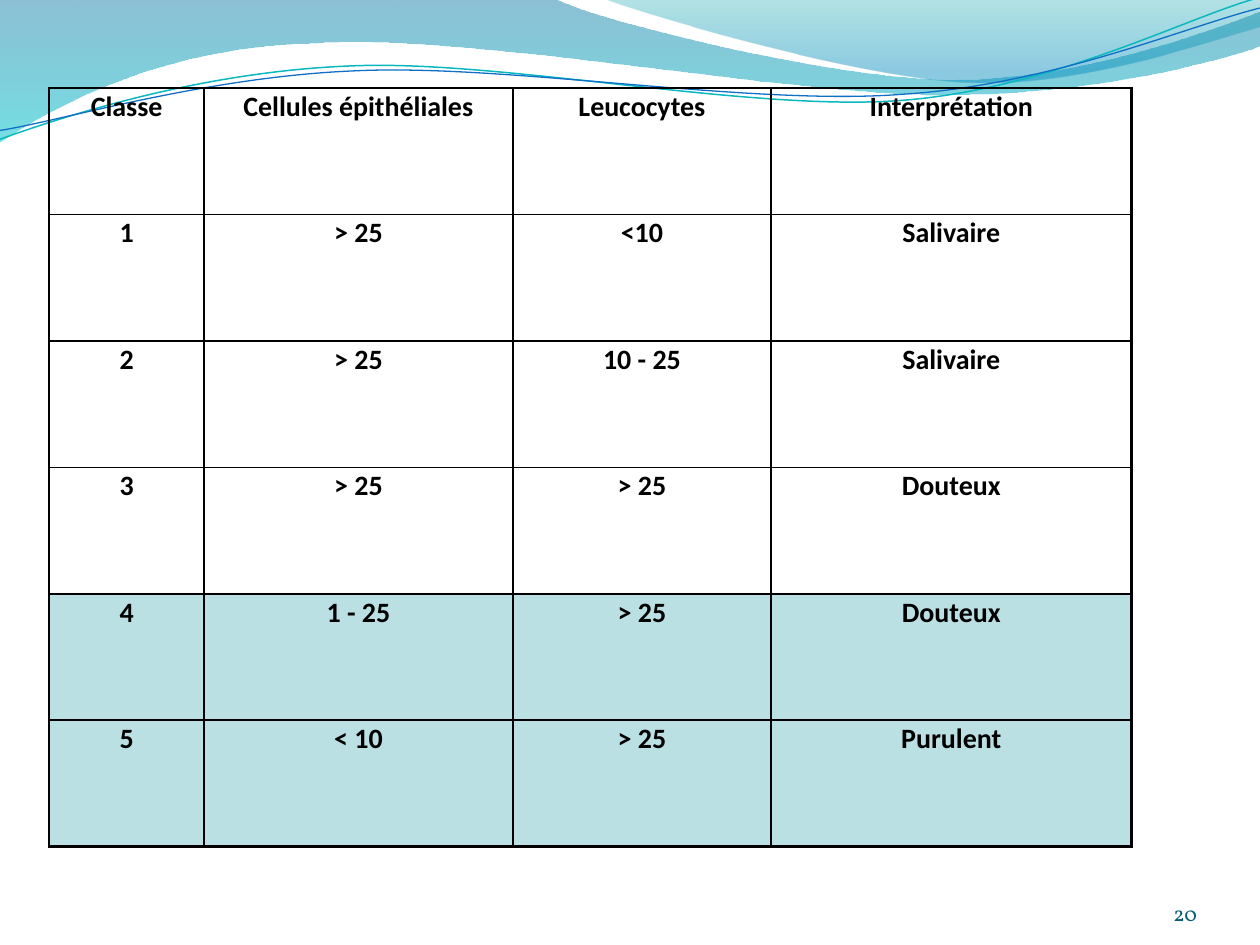
from lxml import etree
from pptx import Presentation
from pptx.dml.color import RGBColor
from pptx.enum.text import MSO_ANCHOR, PP_ALIGN
from pptx.oxml.ns import qn
from pptx.util import Pt

SCALE = 9144
BLANK_LAYOUT = 6
CENTER = PP_ALIGN.CENTER
RIGHT = PP_ALIGN.RIGHT
TOP = MSO_ANCHOR.TOP
BOTTOM = MSO_ANCHOR.BOTTOM

BLACK = RGBColor(0x00, 0x00, 0x00)
HIGHLIGHT = RGBColor(0xBB, 0xE0, 0xE3)
PAGE_NUMBER = RGBColor(0x04, 0x5D, 0x75)
WAVE_BLUE = RGBColor(0x00, 0x74, 0xA1)
WAVE_CYAN = RGBColor(0x00, 0xC6, 0xCF)
CREST_TEAL = RGBColor(0x00, 0xA1, 0xA9)
CREST_BLUE = RGBColor(0x00, 0x8B, 0xBF)
LINE_TEAL = RGBColor(0x0A, 0xB8, 0xBF)
LINE_BLUE = RGBColor(0x0F, 0x6F, 0xC6)

WAVE = [[(0, 0)], [(440, -1)],
        [(476, 17), (664, 63), (758, 63)], [(853, 63), (958, 26), (1000, 9)],
        [(1001, 36)],
        [(983, 44), (870, 76), (746, 75)], [(622, 75), (382, 28), (257, 34)],
        [(129, 36), (46, 83), (-1, 113)]]
CREST = [[(479, -1)],
         [(509, 11), (682, 62), (769, 65)], [(856, 69), (961, 32), (1000, 21)],
         [(1000, 0)]]
TEAL_LINE = [[(-2, 87)],
             [(47, 72), (158, 41), (278, 42)], [(396, 42), (591, 93), (712, 90)],
             [(832, 87), (940, 36), (1000, 22)]]
BLUE_LINE = [[(-2, 80)],
             [(46, 75), (164, 45), (283, 46)], [(403, 46), (596, 89), (716, 85)],
             [(835, 83), (942, 42), (1002, 30)]]
LINE_ROTATION = 357.3

COLUMN_WIDTHS = [123, 245, 205, 286]
ROWS = [
    ("Classe", "Cellules épithéliales", "Leucocytes", "Interprétation"),
    ("1", "> 25", "<10", "Salivaire"),
    ("2", "> 25", "10 - 25", "Salivaire"),
    ("3", "> 25", "> 25", "Douteux"),
    ("4", "1 - 25", "> 25", "Douteux"),
    ("5", "< 10", "> 25", "Purulent"),
]
FIRST_HIGHLIGHTED_ROW = 4


def px(value):
    return round(value * SCALE)


def bend_segments(shape, segments):
    lines = iter(list(shape._element.spPr.iter(qn("a:lnTo"))))
    for segment in segments:
        parts = [next(lines) for _ in segment]
        if len(parts) == 3:
            curve = etree.Element(qn("a:cubicBezTo"))
            parts[0].addprevious(curve)
            for part in parts:
                curve.append(part[0])
                part.getparent().remove(part)


def add_outline(slide, left, top, outline, close):
    vertices = [(px(left + x), px(top + y)) for segment in outline for x, y in segment]
    builder = slide.shapes.build_freeform(*vertices[0], scale=1.0)
    builder.add_line_segments(vertices[1:], close=close)
    shape = builder.convert_to_shape()
    shape.shadow.inherit = False
    bend_segments(shape, outline[1:])
    return shape


def add_gradient_area(slide, left, top, outline, stops):
    shape = add_outline(slide, left, top, outline, True)
    shape.line.fill.background()
    shape.fill.gradient()
    shape.fill.gradient_angle = 270
    for stop, (position, color, _) in zip(shape.fill.gradient_stops, stops):
        stop.position = position
        stop.color.rgb = color
    colors = shape._element.spPr.iter(qn("a:srgbClr"))
    for color, (_, _, opacity) in zip(colors, stops):
        etree.SubElement(color, qn("a:alpha"), val=str(opacity * 1000))


def add_wave_line(slide, left, top, outline, color, width):
    shape = add_outline(slide, left, top, outline, False)
    shape.rotation = LINE_ROTATION
    shape.fill.background()
    shape.line.color.rgb = color
    shape.line.width = Pt(width)


def add_wave_banner(slide, left, top):
    add_gradient_area(slide, left, top, WAVE, [(0, WAVE_BLUE, 45), (1, WAVE_CYAN, 55)])
    add_gradient_area(slide, left, top, CREST, [(0, CREST_TEAL, 30), (0.8, CREST_BLUE, 45)])
    add_wave_line(slide, left, top, TEAL_LINE, LINE_TEAL, 0.85)
    add_wave_line(slide, left, top, BLUE_LINE, LINE_BLUE, 0.75)


def set_border(cell, side, width):
    properties = cell._tc.get_or_add_tcPr()
    line = etree.SubElement(properties, qn(f"a:ln{side}"), w=str(Pt(width)))
    fill = etree.SubElement(line, qn("a:solidFill"))
    etree.SubElement(fill, qn("a:srgbClr"), val=str(BLACK))


def write_text(paragraph, text, alignment, font_name, size, color, bold=False):
    paragraph.alignment = alignment
    run = paragraph.add_run()
    run.text = text
    run.font.name = font_name
    run.font.size = Pt(size)
    run.font.bold = bold
    run.font.color.rgb = color


def format_cell(cell, text, outer_sides, highlighted):
    cell.margin_left = cell.margin_right = cell.margin_top = cell.margin_bottom = 0
    cell.vertical_anchor = TOP
    for side in "LRTB":
        set_border(cell, side, 1.5 if side in outer_sides else 1)
    if highlighted:
        cell.fill.solid()
        cell.fill.fore_color.rgb = HIGHLIGHT
    else:
        cell.fill.background()
    paragraph = cell.text_frame.paragraphs[0]
    paragraph.line_spacing = 1.05
    write_text(paragraph, text, CENTER, "Calibri", 16, BLACK, True)


def add_class_table(slide, left, top, width, height):
    last_row, last_column = len(ROWS) - 1, len(COLUMN_WIDTHS) - 1
    table = slide.shapes.add_table(len(ROWS), len(COLUMN_WIDTHS), px(left), px(top),
                                   px(width), px(height)).table
    table.first_row = False
    table.horz_banding = False
    for column, column_width in zip(table.columns, COLUMN_WIDTHS):
        column.width = px(width * column_width / sum(COLUMN_WIDTHS))
    for row, texts in enumerate(ROWS):
        for column, text in enumerate(texts):
            edges = {"L": column == 0, "R": column == last_column,
                     "T": row == 0, "B": row == last_row}
            outer_sides = [side for side, is_outer in edges.items() if is_outer]
            format_cell(table.cell(row, column), text, outer_sides,
                        row >= FIRST_HIGHLIGHTED_ROW)


def add_page_number(slide, left, top, width, height):
    box = slide.shapes.add_textbox(px(left), px(top), px(width), px(height))
    frame = box.text_frame
    frame.word_wrap = True
    frame.vertical_anchor = BOTTOM
    frame.margin_left = frame.margin_right = frame.margin_top = frame.margin_bottom = 0
    write_text(frame.paragraphs[0], "20", RIGHT, "Vollkorn", 12, PAGE_NUMBER)


def main():
    presentation = Presentation()
    presentation.slide_width = px(1000)
    presentation.slide_height = px(750)
    slide = presentation.slides.add_slide(presentation.slide_layouts[BLANK_LAYOUT])
    add_wave_banner(slide, 0, 0)
    add_class_table(slide, 39, 70, 859, 602)
    add_page_number(slide, 867, 695, 83, 40)
    presentation.save("out.pptx")


if __name__ == "__main__":
    main()
